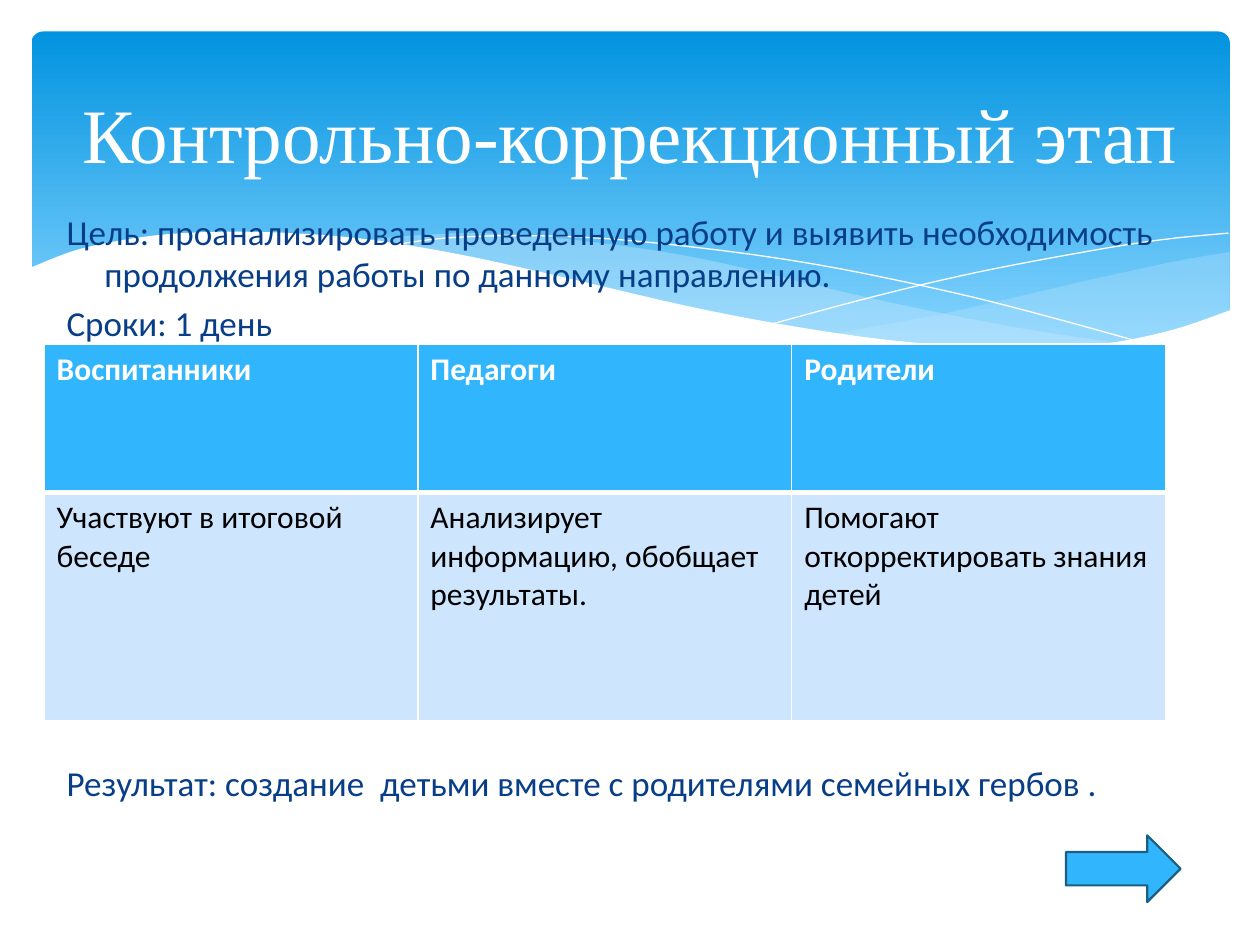
from lxml import etree
from pptx import Presentation
from pptx import util as u
from pptx.dml.color import RGBColor
from pptx.enum import shapes, text
from pptx.oxml import ns

WHITE = RGBColor(0xFF, 0xFF, 0xFF)
BLACK = RGBColor(0, 0, 0)
NAVY = RGBColor(0x07, 0x3E, 0x87)
BLUE = RGBColor(0x31, 0xB6, 0xFD)
DEEP_BLUE = RGBColor(0x02, 0x93, 0xE0)
SKY = RGBColor(0x83, 0xD3, 0xFE)
MIST = RGBColor(0xC6, 0xE7, 0xFC)
PALE = RGBColor(0xCE, 0xE5, 0xFE)
OUTLINE = RGBColor(0x19, 0x5F, 0x84)

RIGHT_VEIL = [
    [(9.76, 2), (9.35, 2.07), (8.61, 2.23), (7.53, 2.48), (6.61, 2.65)],
    [(6.61, 2.65), (7.05, 2.71), (7.57, 2.76), (8.14, 2.78), (8.63, 2.75), (9.13, 2.67), (9.49, 2.57), (9.76, 2.47)],
]
LEFT_VEIL = [
    [(8.93, 2.73), (8.07, 2.6), (7.06, 2.4), (6.29, 2.22), (5.69, 2.08), (5.14, 1.98),
     (4.42, 1.89), (3.8, 1.85), (3.28, 1.87), (2.86, 1.91)],
    [(2.86, 1.91), (3.62, 2.03), (4.49, 2.22), (5.3, 2.4), (6.01, 2.55), (6.8, 2.68),
     (7.48, 2.76), (8.07, 2.78), (8.57, 2.77), (8.93, 2.73)],
]
FALLING_LINE = [[(3.09, 1.95), (3.53, 1.89), (4.16, 1.87), (4.89, 1.9), (5.82, 2),
                 (6.65, 2.13), (7.6, 2.33), (8.31, 2.51), (9.07, 2.72)]]
RISING_LINE = [[(6.13, 2.57), (6.95, 2.35), (7.76, 2.16), (8.66, 1.99), (9.24, 1.9), (9.75, 1.85)]]
WHITE_WAVE = [
    [(9.77, 2.46), (9.3, 2.62), (8.75, 2.73), (8.09, 2.77), (7.26, 2.72), (6.48, 2.62),
     (5.55, 2.45), (4.47, 2.2), (3.65, 2.02), (2.92, 1.9), (2.3, 1.85), (1.77, 1.84),
     (1.32, 1.86), (0.95, 1.91), (0.59, 1.99), (0.23, 2.13)],
    [(0.23, 3.29), (9.77, 3.29)],
]


def smooth(points, steps=6):
    """Return points along a Catmull-Rom curve through the given points."""
    if len(points) < 3:
        return points
    padded = [points[0], *points, points[-1]]
    curve = [points[0]]
    for a, b, c, d in zip(padded, padded[1:], padded[2:], padded[3:]):
        for step in range(1, steps + 1):
            t = step / steps
            curve.append(tuple(
                (2 * q + (r - p) * t + (2 * p - 5 * q + 4 * r - s) * t ** 2
                 + (3 * q - p - 3 * r + s) * t ** 3) / 2
                for p, q, r, s in zip(a, b, c, d)))
    return curve


def add_curve(slide, box, curves, fill=None, opacity=100):
    """Draw a filled outline, or a thin white line when no fill is given."""
    left, top = box[:2]
    points = [(left + u.Inches(x), top + u.Inches(y)) for curve in curves for x, y in smooth(curve)]
    builder = slide.shapes.build_freeform(*points[0])
    builder.add_line_segments(points[1:], close=fill is not None)
    shape = builder.convert_to_shape()
    shape.shadow.inherit = False
    if fill is None:
        shape.fill.background()
        shape.line.color.rgb = WHITE
        shape.line.width = u.Pt(0)
        return
    shape.line.fill.background()
    shape.fill.solid()
    shape.fill.fore_color.rgb = fill
    if opacity < 100:
        color = shape.fill._xPr.find(".//" + ns.qn("a:srgbClr"))
        etree.SubElement(color, ns.qn("a:alpha")).set("val", str(opacity * 1000))


def add_backdrop(slide, box):
    """Place the gradient banner and the waves across its lower edge."""
    left, top, width, height = box
    margin = u.Inches(0.25)
    banner = slide.shapes.add_shape(shapes.MSO_SHAPE.ROUNDED_RECTANGLE, left + margin, top + margin,
                                    u.Inches(9.51), u.Inches(2.7))
    banner.adjustments[0] = 0.034
    banner.shadow.inherit = False
    banner.line.fill.background()
    banner.fill.gradient()
    banner.fill.gradient_angle = 270
    for stop, color, position in zip(banner.fill.gradient_stops, (DEEP_BLUE, SKY), (0, 0.9)):
        stop.color.rgb = color
        stop.position = position
    add_curve(slide, box, RIGHT_VEIL, MIST, 29)
    add_curve(slide, box, LEFT_VEIL, MIST, 40)
    add_curve(slide, box, FALLING_LINE)
    add_curve(slide, box, RISING_LINE)
    add_curve(slide, box, WHITE_WAVE, WHITE)


def add_run(paragraph, words, size, color, font="Calibri", bold=False):
    """Add one formatted run to a paragraph."""
    run = paragraph.add_run()
    run.text = words
    run.font.size = u.Pt(size)
    run.font.name = font
    run.font.bold = bold
    run.font.color.rgb = color


def add_title(slide, box):
    """Place the centred slide title."""
    frame = slide.shapes.add_textbox(*box).text_frame
    frame.word_wrap = True
    frame.vertical_anchor = text.MSO_ANCHOR.MIDDLE
    paragraph = frame.paragraphs[0]
    paragraph.alignment = text.PP_ALIGN.CENTER
    add_run(paragraph, "Контрольно-коррекционный этап", 44, WHITE, "Times New Roman")


def add_body(slide, box):
    """Place the goal and term, with the result below the room for the table."""
    frame = slide.shapes.add_textbox(*box).text_frame
    frame.word_wrap = True
    lines = [
        ("Цель: проанализировать проведенную работу и выявить необходимость "
         "продолжения работы по данному направлению.", 0),
        ("Сроки: 1 день", 4),
        ("Результат: создание  детьми вместе с родителями семейных гербов .", 239),
    ]
    for index, (words, space) in enumerate(lines):
        paragraph = frame.add_paragraph() if index else frame.paragraphs[0]
        paragraph.space_before = u.Pt(space)
        properties = paragraph._p.get_or_add_pPr()
        properties.set("marL", str(u.Inches(0.3)))
        properties.set("indent", str(u.Inches(-0.3)))
        add_run(paragraph, words, 20, NAVY)


def add_borders(cell, bottom):
    """Give a cell white borders, with its own bottom width."""
    properties = cell._tc.get_or_add_tcPr()
    for index, (side, width) in enumerate((("L", 1), ("R", 1), ("T", 1), ("B", bottom))):
        line = etree.Element(ns.qn("a:ln" + side), w=str(u.Pt(width)))
        fill = etree.SubElement(line, ns.qn("a:solidFill"))
        etree.SubElement(fill, ns.qn("a:srgbClr")).set("val", str(WHITE))
        properties.insert(index, line)


def add_roles_table(slide, box):
    """Place the table of what each group does."""
    rows = [
        ("Воспитанники", "Педагоги", "Родители"),
        ("Участвуют в итоговой беседе", "Анализирует информацию, обобщает результаты.",
         "Помогают откорректировать знания детей"),
    ]
    table = slide.shapes.add_table(len(rows), len(rows[0]), *box).table
    table.rows[0].height = u.Inches(1.18)
    table.rows[1].height = box[3] - u.Inches(1.18)
    styles = [(BLUE, WHITE, True, 3), (PALE, BLACK, False, 1)]
    for row, words_in_row, (fill, color, bold, bottom) in zip(table.rows, rows, styles):
        for cell, words in zip(row.cells, words_in_row):
            cell.fill.solid()
            cell.fill.fore_color.rgb = fill
            add_borders(cell, bottom)
            add_run(cell.text_frame.paragraphs[0], words, 18, color, bold=bold)


def add_next_arrow(slide, box):
    """Place the arrow that points onward."""
    arrow = slide.shapes.add_shape(shapes.MSO_SHAPE.RIGHT_ARROW, *box)
    arrow.shadow.inherit = False
    arrow.fill.solid()
    arrow.fill.fore_color.rgb = BLUE
    arrow.line.color.rgb = OUTLINE
    arrow.line.width = u.Pt(1.25)


def main():
    """Build the slide and save it."""
    presentation = Presentation()
    presentation.slide_width = u.Inches(10)
    presentation.slide_height = u.Inches(7.5)
    slide = presentation.slides.add_slide(presentation.slide_layouts[6])
    regions = [
        (add_backdrop, (0, 0, 10, 7.5)),
        (add_body, (0.43, 1.62, 8.98, 5.59)),
        (add_title, (0.5, 0.37, 9, 1.37)),
        (add_roles_table, (0.35, 2.73, 8.9, 2.99)),
        (add_next_arrow, (8.46, 6.63, 0.91, 0.53)),
    ]
    for add_region, box in regions:
        add_region(slide, [u.Inches(length) for length in box])
    presentation.save("out.pptx")


if __name__ == "__main__":
    main()
